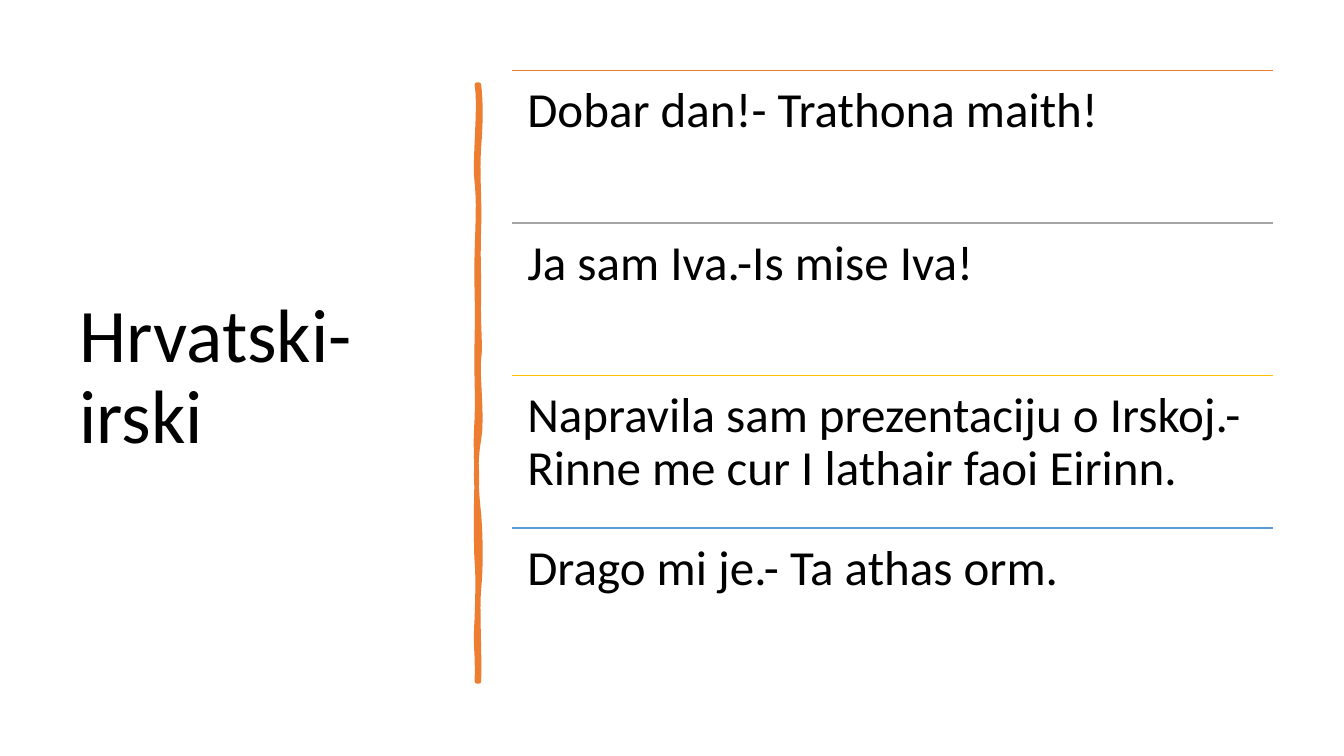
from pptx import Presentation
from pptx.dml.color import RGBColor
from pptx.enum.shapes import MSO_CONNECTOR as Connector
from pptx.enum.text import MSO_ANCHOR as Anchor
from pptx.oxml.ns import qn
from pptx.util import Inches, Pt
from lxml.etree import SubElement

COLORS = {
    "text": "000000",
    "orange": "ED7D31",
    "gray": "A5A5A5",
    "gold": "FFC000",
    "blue": "5B9BD5",
}
FONT = "Calibri"

PHRASES = [
    ("Dobar dan!- Trathona maith!", "orange"),
    ("Ja sam Iva.-Is mise Iva!", "gray"),
    ("Napravila sam prezentaciju o Irskoj.- Rinne me cur I lathair faoi Eirinn.", "gold"),
    ("Drago mi je.- Ta athas orm.", "blue"),
]

# Each wave: sideways bulge and height of two control points, then the end height.
RIGHT_EDGE = [
    (0.02, 0.18, 0.02, 0.35, 0.62), (-0.02, 0.89, 0.01, 1.11, 1.42),
    (-0.01, 1.73, 0, 1.78, 2.1), (-0.01, 2.41, 0.02, 2.58, 2.72),
    (-0.02, 2.86, 0.04, 3.3, 3.52), (-0.04, 3.73, -0.03, 4, 4.26),
    (0.02, 4.52, 0.02, 4.8, 5), (-0.02, 5.19, 0.01, 5.66, 5.92),
]
LEFT_EDGE = [
    (0.01, 5.62, -0.02, 5.6, 5.29), (0.01, 4.99, 0.01, 4.86, 4.73),
    (-0.01, 4.6, -0.01, 4.11, 3.93), (0, 3.75, -0.02, 3.61, 3.31),
    (0.01, 3.02, -0.01, 2.89, 2.51), (0.01, 2.14, -0.01, 1.97, 1.66),
    (0.01, 1.34, 0.02, 1.16, 0.97), (-0.03, 0.79, 0.04, 0.2, 0),
]


def color(name):
    return RGBColor.from_string(COLORS[name])


def add_text(page, box, text, size, inset, anchor):
    shape = page.shapes.add_textbox(*map(Inches, box))
    frame = shape.text_frame
    layout = {"word_wrap": True, "vertical_anchor": anchor}
    for side in ("left", "top", "right", "bottom"):
        layout[f"margin_{side}"] = Inches(inset[side in ("top", "bottom")])
    for name, value in layout.items():
        setattr(frame, name, value)
    para = frame.paragraphs[0]
    para.line_spacing = 0.9
    span = para.add_run()
    span.text = text
    for name, value in {"name": FONT, "size": Pt(size)}.items():
        setattr(span.font, name, value)
    span.font.color.rgb = color("text")


def add_title(page, box):
    add_text(page, box, "Hrvatski-irski", 54, (0.1, 0.05), Anchor.MIDDLE)


def wavy_edge(x, start, waves, steps=8):
    """Return points along the Bezier waves of one vertical edge."""
    points = []
    for bulge_1, y_1, bulge_2, y_2, end in waves:
        for step in range(1, steps + 1):
            t = step / steps
            near, far = 3 * t * (1 - t) ** 2, 3 * t ** 2 * (1 - t)
            points.append((
                x + near * bulge_1 + far * bulge_2,
                start * (1 - t) ** 3 + near * y_1 + far * y_2 + end * t ** 3,
            ))
        start = end
    return points


def add_brush_divider(page, box):
    left, top, width, height = box
    outline = wavy_edge(width, 0, RIGHT_EDGE) + [(0, height)]
    outline += wavy_edge(0, height, LEFT_EDGE)
    points = [(Inches(left + x), Inches(top + y)) for x, y in outline]
    builder = page.shapes.build_freeform(Inches(left + width), Inches(top))
    builder.add_line_segments(points, close=True)
    divider = builder.convert_to_shape()
    divider.shadow.inherit = False
    divider.fill.solid()
    divider.fill.fore_color.rgb = color("orange")
    divider.line.color.rgb = color("orange")
    divider.line.width = Pt(3.25)


def add_phrases(page, box):
    """Stack the phrases in equal rows, each under its own coloured rule."""
    left, top, width, height = box
    row_height = height / len(PHRASES)
    for index, (phrase, accent) in enumerate(PHRASES):
        y = top + index * row_height
        rule = page.shapes.add_connector(
            Connector.STRAIGHT, *map(Inches, (left, y, left + width, y)))
        SubElement(rule._element.spPr, qn("a:effectLst"))
        rule.line.color.rgb = color(accent)
        rule.line.width = Pt(1)
        add_text(page, (left, y, width, row_height), phrase, 35, (0.15, 0.15), Anchor.TOP)


def main():
    deck = Presentation()
    deck.slide_width, deck.slide_height = Inches(13.33), Inches(7.5)
    page = deck.slides.add_slide(deck.slide_layouts[6])
    add_title(page, (0.69, 0.7, 3.74, 6.11))
    add_brush_divider(page, (4.73, 0.84, 0.02, 5.92))
    add_phrases(page, (5.08, 0.7, 7.55, 6.05))
    deck.save("out.pptx")


if __name__ == "__main__":
    main()
